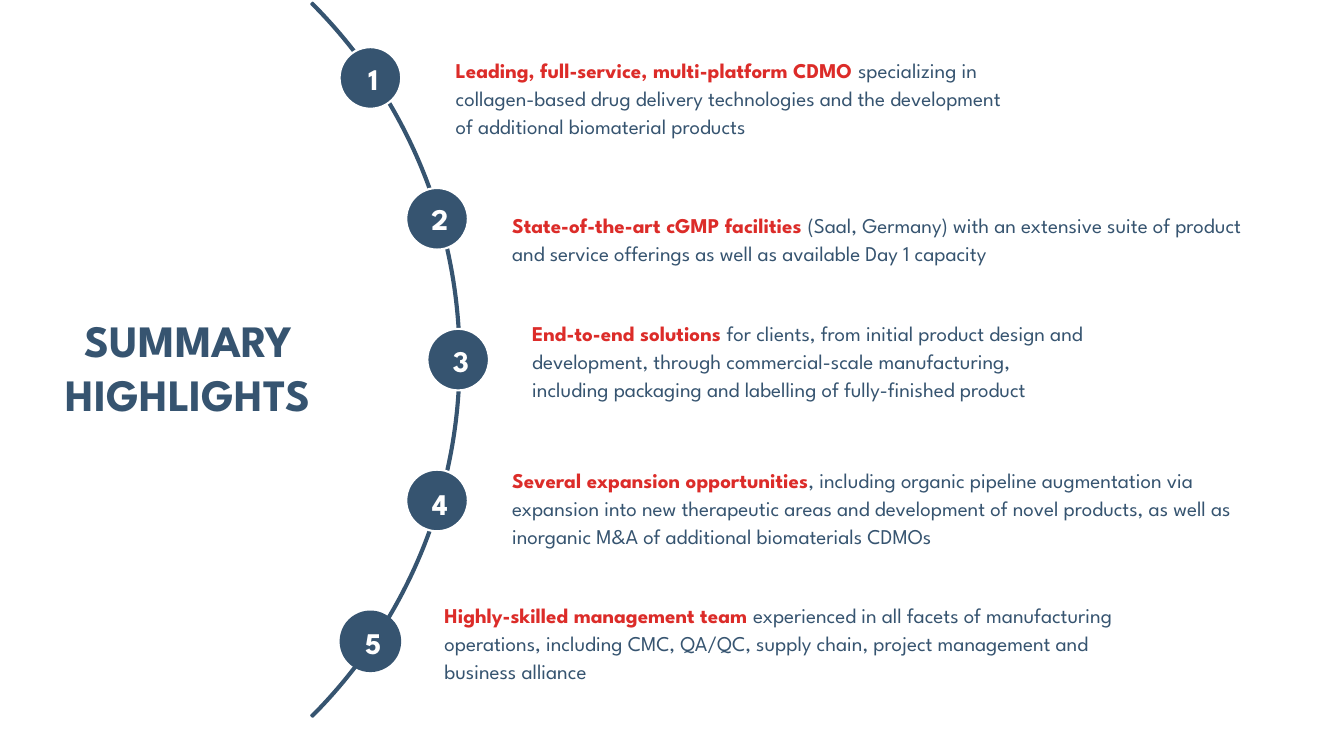
from dataclasses import dataclass

from pptx import Presentation
from pptx.dml.color import RGBColor
from pptx.enum.shapes import MSO_SHAPE
from pptx.enum.text import MSO_ANCHOR, MSO_AUTO_SIZE, PP_ALIGN
from pptx.util import Pt


@dataclass(frozen=True)
class Theme:
    navy: RGBColor = RGBColor(0x36, 0x54, 0x70)
    red: RGBColor = RGBColor(0xDC, 0x2C, 0x29)
    white: RGBColor = RGBColor(0xFF, 0xFF, 0xFF)
    face: str = "League Spartan"
    title: float = 32
    body: float = 15
    number: float = 21.4


@dataclass(frozen=True)
class Highlight:
    lead: str
    detail: str
    circle_left: float
    number_top: float
    box: tuple  # left, top, width, height


THEME = Theme()
FIRST_TOP, PITCH, DIAMETER = 33.7, 100.6, 44

HIGHLIGHTS = [
    Highlight(
        "Leading, full-service, multi-platform CDMO ",
        "specializing in\ncollagen-based drug delivery technologies and the development\n"
        "of additional biomaterial products",
        242.6, 39.6, (272.2, 35.3, 629.3, 67)),
    Highlight(
        "State-of-the-art cGMP facilities ",
        "(Saal, Germany) with an extensive suite of product and service offerings "
        "as well as available Day 1 capacity",
        290.2, 139.7, (312.5, 136.1, 581.8, 67)),
    Highlight(
        "End-to-end solutions ",
        "for clients, from initial product design and\n"
        "development, through commercial-scale manufacturing,\n"
        "including packaging and labelling of fully-finished product",
        305.3, 241.2, (326.9, 211.7, 566.6, 90)),
    Highlight(
        "Several expansion opportunities",
        ", including organic pipeline augmentation via expansion into new therapeutic "
        "areas and development of novel products, as well as inorganic M&A of "
        "additional biomaterials CDMOs",
        290.2, 343.4, (312.5, 342, 581.8, 39.6)),
    Highlight(
        "Highly-skilled management team ",
        "experienced in all facets of manufacturing\n"
        "operations, including CMC, QA/QC, supply chain, project management and\n"
        "business alliance",
        242.6, 442.8, (264.2, 424.8, 629.3, 67)),
]


def apply_format(target, values):
    for name, value in values.items():
        setattr(target, name, value)


def format_frame(frame, left=7.2, right=7.2, vertical=3.6,
                 anchor=MSO_ANCHOR.MIDDLE, auto_size=MSO_AUTO_SIZE.NONE):
    apply_format(frame, {
        "word_wrap": True, "auto_size": auto_size, "vertical_anchor": anchor,
        "margin_left": Pt(left), "margin_right": Pt(right),
        "margin_top": Pt(vertical), "margin_bottom": Pt(vertical)})


def add_run(paragraph, text, size, color, bold):
    run = paragraph.add_run()
    run.text = text
    apply_format(run.font, {"name": THEME.face, "size": Pt(size), "bold": bold})
    run.font.color.rgb = color


def set_title(slide, text):
    title = slide.shapes.title
    apply_format(title, {"left": Pt(-26.6), "top": Pt(100.8),
                         "width": Pt(322.6), "height": Pt(322.6)})
    # Side margins keep one word on each line
    format_frame(title.text_frame, left=47.2, right=47.2, vertical=0)
    paragraph = title.text_frame.paragraphs[0]
    paragraph.alignment = PP_ALIGN.CENTER
    add_run(paragraph, text, THEME.title, THEME.navy, True)


def add_arc(slide):
    arc = slide.shapes.add_shape(
        MSO_SHAPE.BLOCK_ARC, Pt(-392.4), Pt(-103.7), Pt(721.4), Pt(721.4))
    for index, value in enumerate((189, 27, 0.002)):
        arc.adjustments[index] = value
    arc.shadow.inherit = False
    arc.fill.background()
    arc.line.color.rgb = THEME.navy
    arc.line.width = Pt(1.5)


def add_circle(slide, left, top, ringed):
    circle = slide.shapes.add_shape(
        MSO_SHAPE.OVAL, Pt(left), Pt(top), Pt(DIAMETER), Pt(DIAMETER))
    circle.shadow.inherit = False
    circle.fill.solid()
    circle.fill.fore_color.rgb = THEME.navy
    if ringed:
        circle.line.color.rgb = THEME.white
        circle.line.width = Pt(1.5)
    else:
        circle.line.fill.background()


def add_statement(slide, highlight):
    statement = slide.shapes.add_textbox(*map(Pt, highlight.box))
    format_frame(statement.text_frame, left=53.3, right=2.9, vertical=2.9)
    paragraph = statement.text_frame.paragraphs[0]
    paragraph.line_spacing = Pt(20)
    add_run(paragraph, highlight.lead, THEME.body, THEME.red, True)
    for index, line in enumerate(highlight.detail.split("\n")):
        if index:
            paragraph.add_line_break()
        add_run(paragraph, line, THEME.body, THEME.navy, False)


def add_number(slide, number, left, top):
    label = slide.shapes.add_textbox(Pt(left), Pt(top), Pt(37.4), Pt(33.1))
    format_frame(label.text_frame, anchor=MSO_ANCHOR.TOP,
                 auto_size=MSO_AUTO_SIZE.SHAPE_TO_FIT_TEXT)
    paragraph = label.text_frame.paragraphs[0]
    paragraph.alignment = PP_ALIGN.CENTER
    add_run(paragraph, str(number), THEME.number, THEME.white, True)


def main():
    presentation = Presentation()
    presentation.slide_width, presentation.slide_height = Pt(960), Pt(540)
    slide = presentation.slides.add_slide(presentation.slide_layouts[5])

    # Heading and the arc that carries the circles
    set_title(slide, "SUMMARY HIGHLIGHTS")
    add_arc(slide)

    # Statements with their numbered circles; the last circle has no ring
    for index, highlight in enumerate(HIGHLIGHTS):
        add_statement(slide, highlight)
        add_circle(slide, highlight.circle_left, FIRST_TOP + index * PITCH,
                   ringed=index < len(HIGHLIGHTS) - 1)
        add_number(slide, index + 1, highlight.circle_left + 5.3, highlight.number_top)

    presentation.save("out.pptx")


if __name__ == "__main__":
    main()
